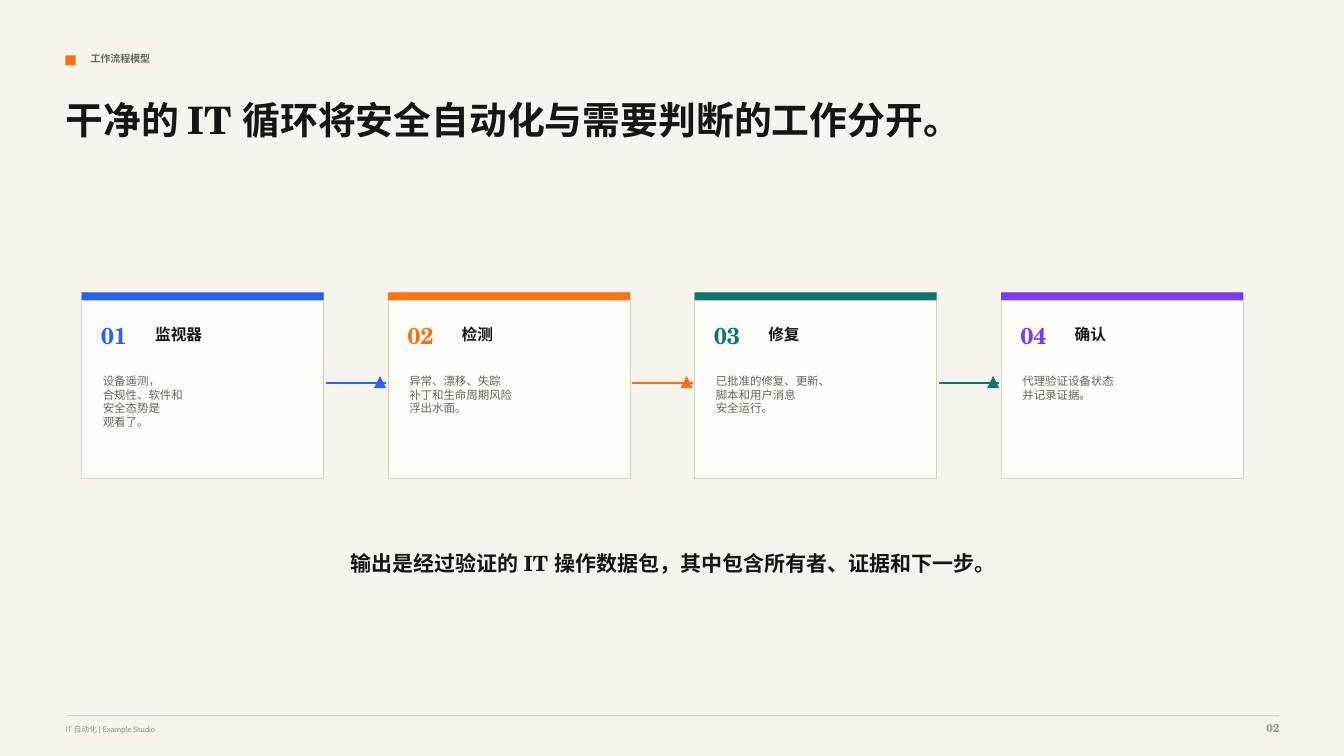
from lxml import etree
from pptx import Presentation
from pptx.dml.color import RGBColor
from pptx.enum.shapes import MSO_CONNECTOR, MSO_SHAPE
from pptx.enum.text import PP_ALIGN
from pptx.oxml.ns import qn
from pptx.util import Pt

RECTANGLE, TRIANGLE = MSO_SHAPE.RECTANGLE, MSO_SHAPE.ISOSCELES_TRIANGLE
STRAIGHT = MSO_CONNECTOR.STRAIGHT
LEFT, CENTER, RIGHT = PP_ALIGN.LEFT, PP_ALIGN.CENTER, PP_ALIGN.RIGHT

PAPER = RGBColor(0xF7, 0xF4, 0xEE)
CARD = RGBColor(0xFF, 0xFD, 0xF8)
BORDER = RGBColor(0xD9, 0xD0, 0xC3)
INK = RGBColor(0x17, 0x16, 0x14)
GRAY = RGBColor(0x69, 0x63, 0x5A)
FAINT = RGBColor(0x9A, 0x91, 0x84)
BLUE = RGBColor(0x25, 0x63, 0xEB)
ORANGE = RGBColor(0xF9, 0x73, 0x16)
GREEN = RGBColor(0x0F, 0x76, 0x6E)
PURPLE = RGBColor(0x7C, 0x3A, 0xED)

# Content
SECTION = "工作流程模型"
TITLE = "干净的 IT 循环将安全自动化与需要判断的工作分开。"
STEPS = [
    ("监视器", BLUE, ["设备遥测，", "合规性、软件和", "安全态势是", "观看了。"]),
    ("检测", ORANGE, ["异常、漂移、失踪", "补丁和生命周期风险", "浮出水面。"]),
    ("修复", GREEN, ["已批准的修复、更新、", "脚本和用户消息", "安全运行。"]),
    ("确认", PURPLE, ["代理验证设备状态", "并记录证据。"]),
]
SUMMARY = "输出是经过验证的 IT 操作数据包，其中包含所有者、证据和下一步。"
FOOTER = "IT 自动化 | Example Studio"
PAGE = "02"

# Text formats
SANS, SERIF = "Cabin", "TeX Gyre Schola"
FORMATS = {
    "section": {"name": SANS, "size": Pt(7.1), "bold": True},
    "title": {"name": SERIF, "size": Pt(27), "bold": True},
    "number": {"name": SERIF, "size": Pt(16.5), "bold": True},
    "heading": {"name": SANS, "size": Pt(11.2), "bold": True},
    "body": {"name": SANS, "size": Pt(8.2), "bold": False},
    "summary": {"name": SERIF, "size": Pt(15), "bold": True},
    "footer": {"name": SANS, "size": Pt(5.6), "bold": False},
    "page": {"name": SERIF, "size": Pt(8.2), "bold": True},
}

# Layout in px, 100 to the inch
PX = 9144
SLIDE_WIDTH, SLIDE_HEIGHT = 1333, 750
MARGIN, CONTENT_WIDTH = 65, 1204
CARD_LEFT, CARD_TOP, CARD_WIDTH, CARD_HEIGHT = 81, 290, 240, 185
CARD_PITCH = 304
BAR_HEIGHT = 8
ARROW_GAP, ARROW_LENGTH, ARROW_Y, ARROW_HEAD = 2, 60, 380, 12
RULE_Y = 710

presentation = Presentation()
presentation.slide_width = SLIDE_WIDTH * PX
presentation.slide_height = SLIDE_HEIGHT * PX
slide = presentation.slides.add_slide(presentation.slide_layouts[6])
slide.background.fill.solid()
slide.background.fill.fore_color.rgb = PAPER


def add_box(kind, left, top, width, height, fill, border=None):
    shape = slide.shapes.add_shape(kind, left * PX, top * PX, width * PX, height * PX)
    shape.shadow.inherit = False
    shape.fill.solid()
    shape.fill.fore_color.rgb = fill
    if border is None:
        shape.line.fill.background()
    else:
        shape.line.color.rgb = border
        shape.line.width = Pt(0.75)


def add_line(left, y, length, color, weight):
    line = slide.shapes.add_connector(
        STRAIGHT, left * PX, y * PX, (left + length) * PX, y * PX)
    line.line.color.rgb = color
    line.line.width = Pt(weight)
    etree.SubElement(line._element.spPr, qn("a:effectLst"))


def add_text(lines, left, top, width, height, style, color, align=LEFT):
    frame = slide.shapes.add_textbox(
        left * PX, top * PX, width * PX, height * PX).text_frame
    frame.word_wrap = True
    for side in ("left", "top", "right", "bottom"):
        setattr(frame, f"margin_{side}", 0)
    frame.text = "\n".join(lines)
    for paragraph in frame.paragraphs:
        paragraph.alignment = align
        for run in paragraph.runs:
            run.font.color.rgb = color
            for key, value in FORMATS[style].items():
                setattr(run.font, key, value)


# Header
add_box(RECTANGLE, MARGIN, 55, 10, 10, ORANGE)
add_text([SECTION], 90, 52, 646, 19, "section", GRAY)
add_text([TITLE], MARGIN, 96, 938, 108, "title", INK)

# Step cards and the arrows between them
for index, (heading, color, body) in enumerate(STEPS):
    left = CARD_LEFT + index * CARD_PITCH
    add_box(RECTANGLE, left, CARD_TOP, CARD_WIDTH, CARD_HEIGHT, CARD, BORDER)
    add_box(RECTANGLE, left, CARD_TOP, CARD_WIDTH, BAR_HEIGHT, color)
    add_text([f"{index + 1:02d}"], left + 19, CARD_TOP + 29, 46, 29, "number", color)
    add_text([heading], left + 73, CARD_TOP + 32, 133, 21, "heading", INK)
    add_text(body, left + 21, CARD_TOP + 81, 192, 71, "body", GRAY)
    if index < len(STEPS) - 1:
        start = left + CARD_WIDTH + ARROW_GAP
        add_line(start, ARROW_Y, ARROW_LENGTH, color, 1.6)
        add_box(TRIANGLE, start + ARROW_LENGTH - ARROW_HEAD,
                ARROW_Y - ARROW_HEAD // 2 - 1, ARROW_HEAD, ARROW_HEAD, color)

# Summary
add_text([SUMMARY], 183, 546, 969, 44, "summary", INK, CENTER)

# Footer
add_line(MARGIN, RULE_Y, CONTENT_WIDTH, BORDER, 0.75)
add_text([FOOTER], MARGIN, 719, 792, 15, "footer", FAINT)
add_text([PAGE], MARGIN + CONTENT_WIDTH - 50, 715, 50, 19, "page", FAINT, RIGHT)

presentation.save("out.pptx")
